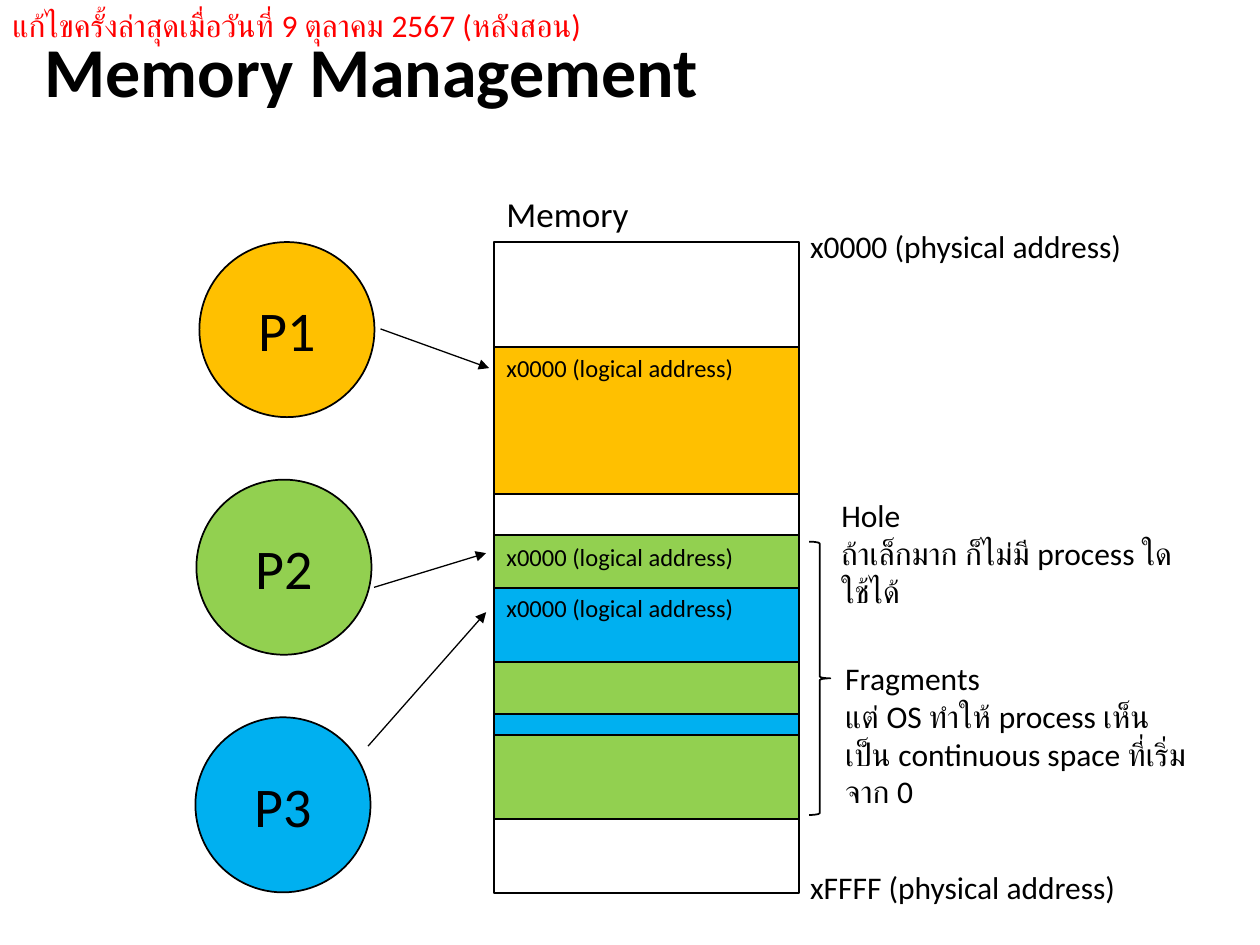
from lxml import etree
from pptx import Presentation
from pptx.dml.color import RGBColor
from pptx.enum import shapes, text
from pptx.oxml.ns import qn
from pptx.util import Cm, Pt

BLACK, RED = "000000", "FF0000"
ORANGE, GREEN, BLUE = "FFC000", "92D050", "00B0F0"


def write(sp, words, size, color=BLACK, bold=False, align=text.PP_ALIGN.LEFT,
          anchor=text.MSO_ANCHOR.TOP):
    tf = sp.text_frame
    for name, value in {"word_wrap": True, "vertical_anchor": anchor,
                        "auto_size": text.MSO_AUTO_SIZE.NONE}.items():
        setattr(tf, name, value)
    p = tf.paragraphs[0]
    p.text = words
    p.alignment = align
    for r in p.runs:
        for name, value in {"name": "Calibri", "size": Pt(size), "bold": bold}.items():
            setattr(r.font, name, value)
        r.font.color.rgb = RGBColor.from_string(color)


def draw(kind, x, y, w, h, fill=None):
    sp = s.shapes.add_shape(kind, Cm(x), Cm(y), Cm(w), Cm(h))
    sp.shadow.inherit = False
    if fill:
        sp.fill.solid()
        sp.fill.fore_color.rgb = RGBColor.from_string(fill)
    else:
        sp.fill.background()
    sp.line.color.rgb = RGBColor.from_string(BLACK)
    sp.line.width = Pt(1)
    return sp


prs = Presentation()
prs.slide_width, prs.slide_height = Cm(25.4), Cm(19.05)
s = prs.slides.add_slide(prs.slide_layouts[5])

# Title
title = s.shapes.title
for name, value in {"left": 0.64, "top": 0.43, "width": 27.33, "height": 1.96}.items():
    setattr(title, name, Cm(value))
write(title, "Memory Management", 40, bold=True)

# Memory column and its allocated blocks
mem_x, mem_w, top = 9.96, 6.15, 4.88
draw(shapes.MSO_SHAPE.RECTANGLE, mem_x, top, mem_w, 13.13)
for y, h, fill in [(6.99, 2.97, ORANGE), (10.78, 1.07, GREEN), (13.34, 1.12, GREEN),
                   (11.86, 1.48, BLUE), (14.4, 0.43, BLUE), (14.82, 1.69, GREEN)]:
    draw(shapes.MSO_SHAPE.RECTANGLE, mem_x, y, mem_w, h, fill)

# Processes
for i, (x, fill) in enumerate([(4.02, ORANGE), (3.96, GREEN), (3.94, BLUE)]):
    sp = draw(shapes.MSO_SHAPE.OVAL, x, top + i * 4.79, 3.53, 3.53, fill)
    write(sp, f"P{i + 1}", 32, align=text.PP_ALIGN.CENTER, anchor=text.MSO_ANCHOR.MIDDLE)

# Arrows from each process to its first block
for ends in [(7.67, 6.63, 9.86, 7.42), (7.54, 11.84, 9.8, 11.15),
             (7.42, 15.04, 9.8, 12.34)]:
    arrow = s.shapes.add_connector(shapes.MSO_CONNECTOR.STRAIGHT, *map(Cm, ends))
    arrow.line.color.rgb = RGBColor.from_string(BLACK)
    arrow.line.width = Pt(0.75)
    etree.SubElement(arrow.line._get_or_add_ln(), qn("a:tailEnd"), type="triangle")
    etree.SubElement(arrow._element.spPr, qn("a:effectLst"))

# Brace around the fragments
draw(shapes.MSO_SHAPE.RIGHT_BRACE, 16.31, 10.92, 0.43, 5.51)

# Labels
logical = "x0000 (logical address)"
for x, y, w, h, size, color, words in [
    (mem_x, 3.76, mem_w, 1.12, 20, BLACK, "Memory"),
    (16.08, 4.45, 7.62, 1.02, 18, BLACK, "x0000 (physical address)"),
    (16.08, 17.37, 7.62, 1.02, 18, BLACK, "xFFFF (physical address)"),
    (mem_x, 6.99, mem_w, 0.86, 14, BLACK, logical),
    (mem_x, 10.8, mem_w, 0.86, 14, BLACK, logical),
    (mem_x, 11.84, mem_w, 0.86, 14, BLACK, logical),
    (16.79, 13.16, 7.54, 2.57, 18, BLACK,
     "Fragments\nแต่ OS ทำให้ process เห็นเป็น continuous space ที่เริ่มจาก 0"),
    (16.71, 9.88, 7.62, 1.8, 18, BLACK,
     "Hole\nถ้าเล็กมาก ก็ไม่มี process ใดใช้ได้"),
    (0, 0, 25.4, 1.02, 18, RED,
     "แก้ไขครั้งล่าสุดเมื่อวันที่ 9 ตุลาคม 2567 (หลังสอน)"),
]:
    write(s.shapes.add_textbox(Cm(x), Cm(y), Cm(w), Cm(h)), words, size, color)

prs.save("out.pptx")
